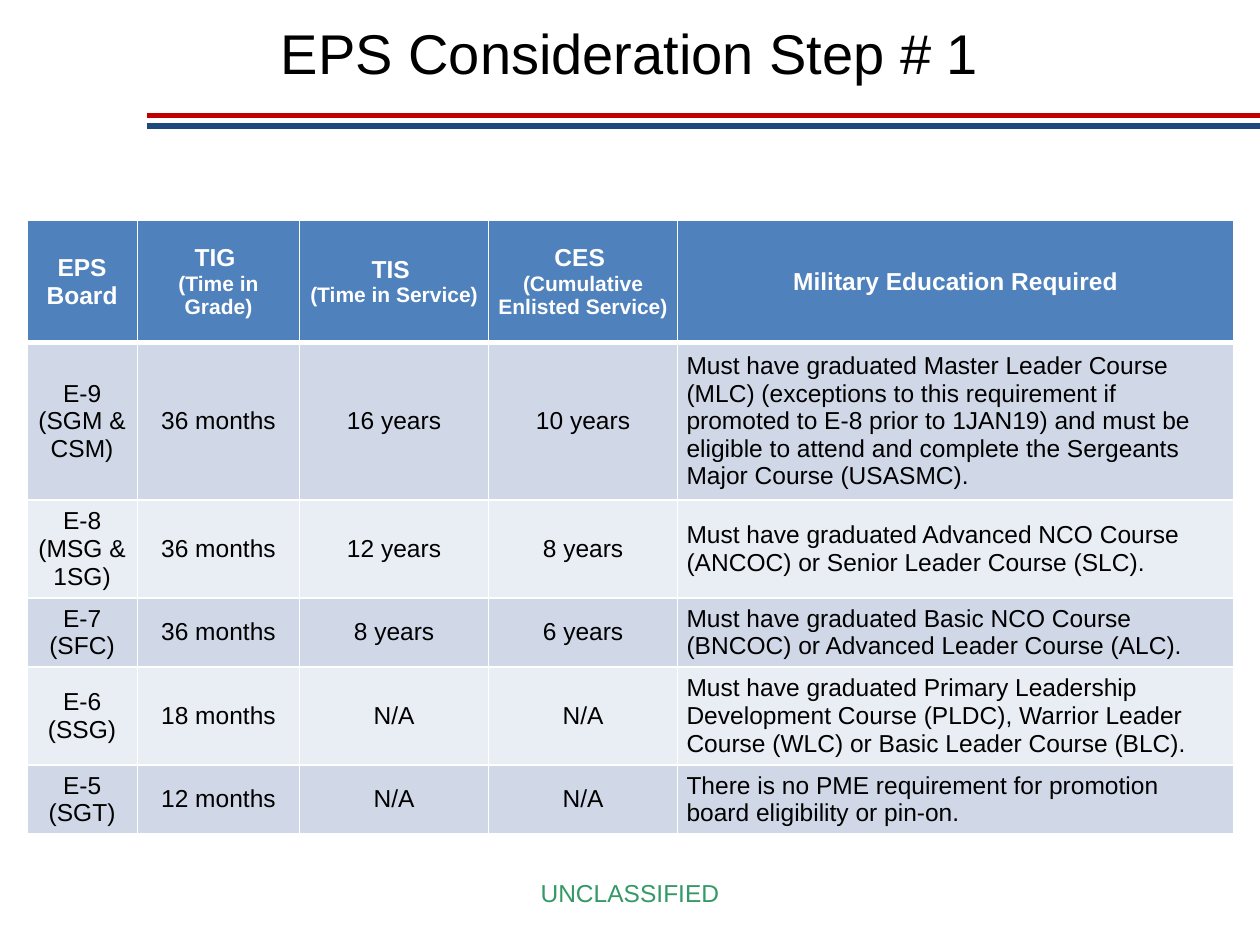
import dataclasses

import lxml.etree
import pptx
import pptx.dml.color
import pptx.enum.shapes
import pptx.enum.text
import pptx.oxml.ns
import pptx.util

Cm = pptx.util.Cm
Pt = pptx.util.Pt
Align = pptx.enum.text.PP_ALIGN
Anchor = pptx.enum.text.MSO_ANCHOR
qn = pptx.oxml.ns.qn


@dataclasses.dataclass(frozen=True)
class Theme:
    font: str = "Arial"
    black: str = "000000"
    white: str = "FFFFFF"
    red: str = "C00000"
    navy: str = "1F497D"
    green: str = "339966"
    head: str = "4F81BD"
    bands: tuple = ("D0D8E8", "E9EDF4")
    title: int = 32
    body: int = 14
    small: int = 12


WIDTHS = (2.23, 3.27, 3.81, 3.81, 11.21)
HEIGHTS = (2.46, 3.15, 1.97, 1.37, 1.97, 1.37)
# Each heading is a main line and an optional smaller line.
HEADS = (
    ("EPS Board", ""),
    ("TIG ", "(Time in Grade)"),
    ("TIS ", "(Time in Service)"),
    ("CES ", "(Cumulative Enlisted Service)"),
    ("Military Education Required", ""),
)
ROWS = (
    ("E-9 (SGM & CSM)", "36 months", "16 years", "10 years",
     "Must have graduated Master Leader Course (MLC) (exceptions to this "
     "requirement if promoted to E-8 prior to 1JAN19) and must be eligible to "
     "attend and complete the Sergeants Major Course (USASMC)."),
    ("E-8 (MSG & 1SG)", "36 months", "12 years", "8 years",
     "Must have graduated Advanced NCO Course (ANCOC) or Senior Leader "
     "Course (SLC)."),
    ("E-7 (SFC)", "36 months", "8 years", "6 years",
     "Must have graduated Basic NCO Course (BNCOC) or Advanced Leader "
     "Course (ALC)."),
    ("E-6 (SSG)", "18 months", "N/A", "N/A",
     "Must have graduated Primary Leadership Development Course (PLDC), "
     "Warrior Leader Course (WLC) or Basic Leader Course (BLC)."),
    ("E-5 (SGT)", "12 months", "N/A", "N/A",
     "There is no PME requirement for promotion board eligibility or pin-on."),
)


def tint(code):
    return pptx.dml.color.RGBColor.from_string(code)


def write(para, text, *, size, color, bold=False, align=Align.CENTER):
    """Append one formatted run to the paragraph."""
    para.alignment = align
    run = para.add_run()
    run.text = text
    run.font.name = Theme.font
    run.font.size = Pt(size)
    run.font.bold = bold
    run.font.color.rgb = tint(color)


def border(cell, color, **sides):
    """Draw cell edges; sides gives points for L, R, T and B, in that order."""
    props = cell._tc.get_or_add_tcPr()
    for spot, (side, width) in enumerate(sides.items()):
        edge = lxml.etree.Element(qn(f"a:ln{side}"), w=str(Pt(width)))
        fill = lxml.etree.SubElement(edge, qn("a:solidFill"))
        lxml.etree.SubElement(fill, qn("a:srgbClr"), val=color)
        props.insert(spot, edge)


class Board:
    def __init__(self, slide, theme):
        self.slide = slide
        self.theme = theme

    def label(self, text, left, top, width, height, **style):
        box = self.slide.shapes.add_textbox(
            Cm(left), Cm(top), Cm(width), Cm(height))
        frame = box.text_frame
        frame.word_wrap = True
        frame.auto_size = pptx.enum.text.MSO_AUTO_SIZE.SHAPE_TO_FIT_TEXT
        write(frame.paragraphs[0], text, **style)

    def rule(self, left, right, top, color):
        line = self.slide.shapes.add_connector(
            pptx.enum.shapes.MSO_CONNECTOR.STRAIGHT,
            Cm(left), Cm(top), Cm(right), Cm(top))
        line.line.color.rgb = tint(color)
        line.line.width = Pt(3)
        lxml.etree.SubElement(line._element.spPr, qn("a:effectLst"))

    def cell(self, cell, fill, top=1, base=1):
        """Fill and edge a cell, and return its paragraph."""
        cell.fill.solid()
        cell.fill.fore_color.rgb = tint(fill)
        border(cell, self.theme.white, L=1, R=1, T=top, B=base)
        cell.vertical_anchor = Anchor.MIDDLE
        cell.margin_left = cell.margin_right = Cm(0.18)
        cell.margin_top = cell.margin_bottom = Cm(0.1)
        return cell.text_frame.paragraphs[0]

    def table(self, left, top, heads, rows):
        look = self.theme
        grid = self.slide.shapes.add_table(
            len(rows) + 1, len(heads), Cm(left), Cm(top),
            Cm(sum(WIDTHS)), Cm(sum(HEIGHTS))).table
        grid.horz_banding = False
        for col, width in zip(grid.columns, WIDTHS):
            col.width = Cm(width)
        for row, height in zip(grid.rows, HEIGHTS):
            row.height = Cm(height)

        for col, (main, note) in enumerate(heads):
            para = self.cell(grid.cell(0, col), look.head, base=3)
            write(para, main, size=look.body, color=look.white, bold=True)
            if note:
                para.add_line_break()
                write(para, note, size=look.small, color=look.white, bold=True)

        for num, row in enumerate(rows, 1):
            for col, text in enumerate(row):
                para = self.cell(grid.cell(num, col), look.bands[(num - 1) % 2],
                                 top=3 if num == 1 else 1)
                last = col == len(row) - 1
                write(para, text, size=look.body, color=look.black,
                      align=Align.LEFT if last else Align.CENTER)


def main():
    deck = pptx.Presentation()
    deck.slide_width, deck.slide_height = Cm(25.4), Cm(19.05)
    look = Theme()
    board = Board(deck.slides.add_slide(deck.slide_layouts[6]), look)
    board.rule(2.97, 25.4, 2.33, look.red)
    board.rule(2.97, 25.4, 2.54, look.navy)
    board.label("UNCLASSIFIED", 9.1, 17.58, 7.2, 0.86,
                size=look.body, color=look.green)
    board.table(0.54, 4.45, HEADS, ROWS)
    board.label("EPS Consideration Step # 1", 0, 0.25, 25.4, 1.63,
                size=look.title, color=look.black)
    deck.save("out.pptx")


if __name__ == "__main__":
    main()
